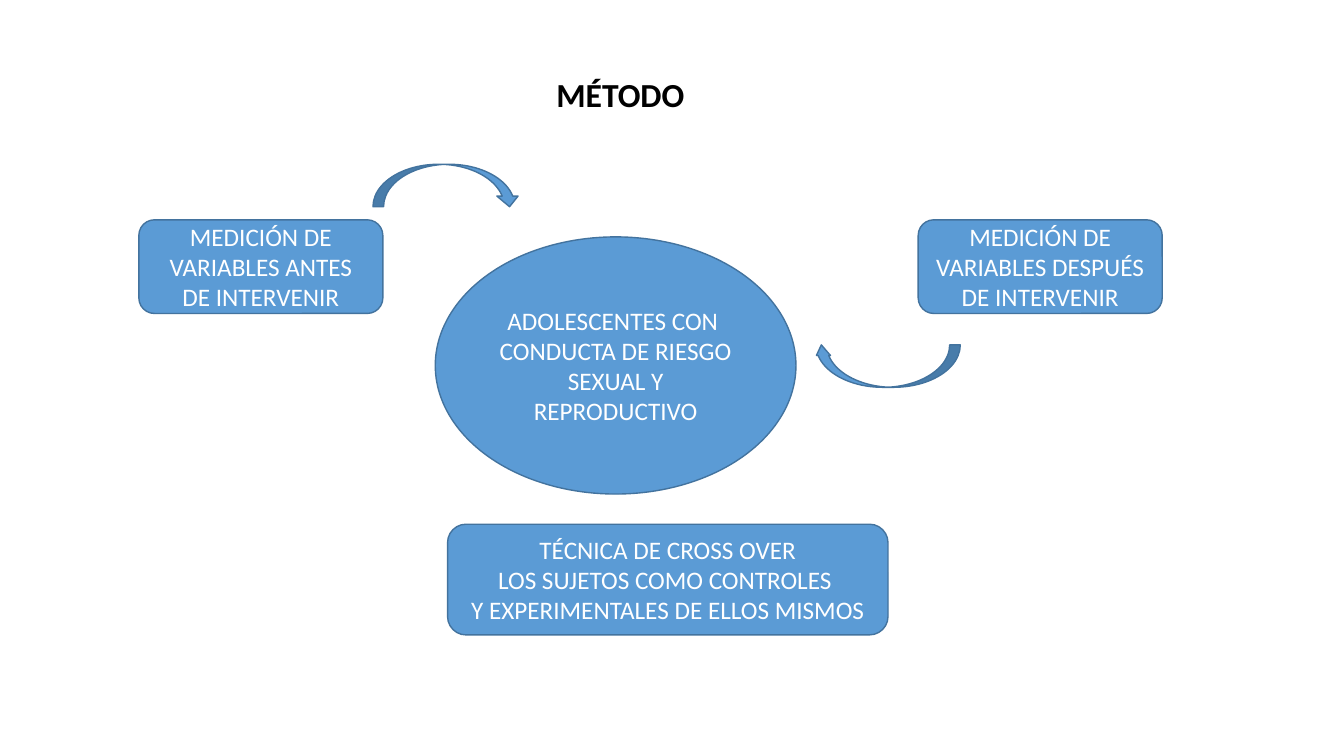
from pptx import Presentation
from pptx.dml.color import RGBColor as RGB
from pptx.enum.shapes import MSO_SHAPE as Kind
from pptx.enum.text import MSO_ANCHOR as Anchor, MSO_AUTO_SIZE as Auto, PP_ALIGN as Align
from pptx.util import Cm, Pt

# Content
TITLE = ["MÉTODO"]
GROUP = ["ADOLESCENTES CON ", "CONDUCTA DE RIESGO", "SEXUAL Y REPRODUCTIVO"]
BEFORE = ["MEDICIÓN DE VARIABLES ANTES DE INTERVENIR"]
AFTER = ["MEDICIÓN DE VARIABLES DESPUÉS DE INTERVENIR"]
DESIGN = ["TÉCNICA DE CROSS OVER", "LOS SUJETOS COMO CONTROLES ",
          "Y EXPERIMENTALES DE ELLOS MISMOS"]

# Format
COLORS = {"fill": "5B9BD5", "line": "43739E", "light": "FFFFFF", "dark": "000000"}
BODY = {"name": "Calibri", "size": Pt(18), "bold": False}
HEAD = {"name": "Calibri", "size": Pt(24), "bold": True}

# Places in cm: left, top, width, height
SIDE_TOP, SIDE_W, SIDE_H = 5.54, 6.15, 2.36
NODES = [
    (Kind.OVAL, (10.97, 5.97, 9.09, 6.48), GROUP),
    (Kind.ROUNDED_RECTANGLE, (3.5, SIDE_TOP, SIDE_W, SIDE_H), BEFORE),
    (Kind.ROUNDED_RECTANGLE, (23.14, SIDE_TOP, SIDE_W, SIDE_H), AFTER),
    (Kind.ROUNDED_RECTANGLE, (11.28, 13.21, 11.1, 2.79), DESIGN),
]
# Place, turn, adjustments
ARROWS = [
    ((9.4, 4.14, 3.71, 1.07), 0, ()),
    ((20.52, 8.69, 3.68, 1.07), 180, (0.25, 0.332, 0.25)),
]


def write(frame, lines, style, color, align):
    for i, line in enumerate(lines):
        para = frame.paragraphs[0] if i == 0 else frame.add_paragraph()
        para.alignment = align
        run = para.add_run()
        run.text = line
        for key, value in style.items():
            setattr(run.font, key, value)
        run.font.color.rgb = RGB.from_string(COLORS[color])


def draw(slide, kind, place):
    shape = slide.shapes.add_shape(kind, *map(Cm, place))
    shape.shadow.inherit = False
    shape.fill.solid()
    shape.fill.fore_color.rgb = RGB.from_string(COLORS["fill"])
    shape.line.color.rgb = RGB.from_string(COLORS["line"])
    shape.line.width = Pt(1)
    return shape


def main():
    deck = Presentation()
    deck.slide_width, deck.slide_height = Cm(33.87), Cm(19.05)
    slide = deck.slides.add_slide(deck.slide_layouts[6])

    # Study group, measurements and design
    for kind, place, lines in NODES:
        frame = draw(slide, kind, place).text_frame
        frame.word_wrap = True
        frame.vertical_anchor = Anchor.MIDDLE
        write(frame, lines, BODY, "light", Align.CENTER)

    # Curved arrows
    for place, turn, bends in ARROWS:
        arrow = draw(slide, Kind.CURVED_DOWN_ARROW, place)
        arrow.rotation = turn
        for i, bend in enumerate(bends):
            arrow.adjustments[i] = bend

    # Title
    frame = slide.shapes.add_textbox(*map(Cm, (13.77, 1.75, 3.78, 1.27))).text_frame
    frame.word_wrap = False
    frame.auto_size = Auto.SHAPE_TO_FIT_TEXT
    write(frame, TITLE, HEAD, "dark", Align.LEFT)

    deck.save("out.pptx")


if __name__ == "__main__":
    main()
